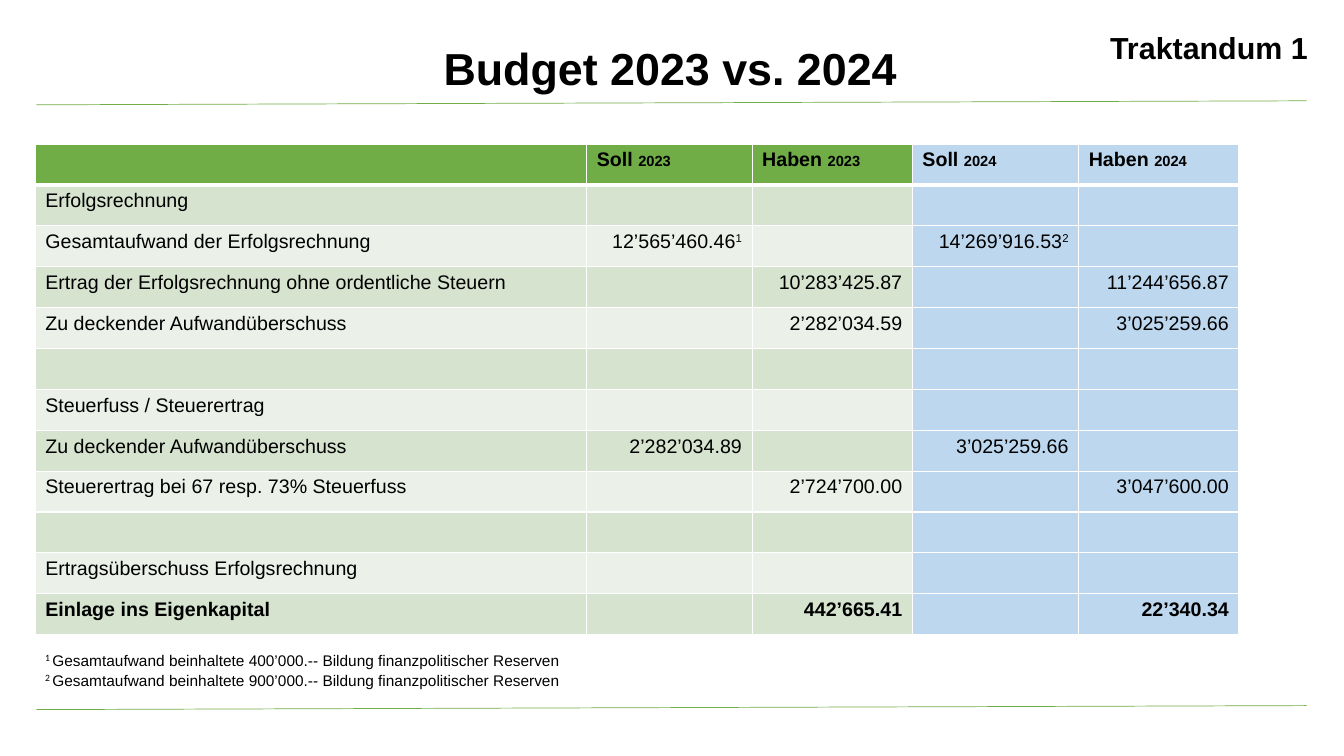
from dataclasses import dataclass
from typing import Any, NamedTuple

from lxml import etree
from pptx import Presentation
from pptx import util as u
from pptx.dml import color
from pptx.enum import shapes, text
from pptx.oxml import ns


@dataclass(frozen=True)
class Theme:
    font: str = "Arial"
    note_mark_font: str = "Calibri"
    ink: str = "000000"
    white: str = "FFFFFF"
    green: str = "70AD47"
    blue: str = "BDD7EE"
    bands: tuple[str, str] = ("D5E3CF", "EBF1E9")
    title: float = 32
    agenda: float = 21.7
    body: float = 14
    year: float = 10.5
    note: float = 11
    note_mark: float = 12


class Span(NamedTuple):
    words: str
    size: float
    bold: bool = False
    raised: bool = False
    font: str = "Arial"


class Frame(NamedTuple):
    left: float
    top: float
    width: float
    height: float


class Label(NamedTuple):
    frame: Frame
    lines: list[list[Span]]
    formats: dict[str, Any]


class Entry(NamedTuple):
    name: str = ""
    debit_2023: str = ""
    credit_2023: str = ""
    debit_2024: str = ""
    credit_2024: str = ""
    bold: bool = False


THEME = Theme()
COLUMN_WIDTHS = (5.47, 1.64, 1.59, 1.65, 1.59)
TABLE_FRAME = Frame(0.35, 1.43, sum(COLUMN_WIDTHS), 4.87)
HEADINGS = (("", ""), ("Soll ", "2023"), ("Haben ", "2023"), ("Soll ", "2024"), ("Haben ", "2024"))
FOOTNOTE_MARKS = {(1, 1): "1", (1, 3): "2"}
RULE_TOPS = (1.0, 7.0)

ENTRIES = (
    Entry("Erfolgsrechnung"),
    Entry("Gesamtaufwand der Erfolgsrechnung", debit_2023="12’565’460.46", debit_2024="14’269’916.53"),
    Entry("Ertrag der Erfolgsrechnung ohne ordentliche Steuern", credit_2023="10’283’425.87", credit_2024="11’244’656.87"),
    Entry("Zu deckender Aufwandüberschuss", credit_2023="2’282’034.59", credit_2024="3’025’259.66"),
    Entry(),
    Entry("Steuerfuss / Steuerertrag"),
    Entry("Zu deckender Aufwandüberschuss", debit_2023="2’282’034.89", debit_2024="3’025’259.66"),
    Entry("Steuerertrag bei 67 resp. 73% Steuerfuss", credit_2023="2’724’700.00", credit_2024="3’047’600.00"),
    Entry(),
    Entry("Ertragsüberschuss Erfolgsrechnung"),
    Entry("Einlage ins Eigenkapital", credit_2023="442’665.41", credit_2024="22’340.34", bold=True),
)


def footnote(mark: str, amount: str) -> list[Span]:
    return [
        Span(f"{mark} ", THEME.note_mark, raised=True, font=THEME.note_mark_font),
        Span(f"Gesamtaufwand beinhaltete {amount}.-- Bildung finanzpolitischer Reserven", THEME.note),
    ]


LABELS = (
    Label(
        Frame(0.35, 0.42, 12.6, 0.8),
        [[Span("Budget 2023 vs. 2024", THEME.title, bold=True)]],
        {"alignment": text.PP_ALIGN.CENTER, "line_spacing": 0.9},
    ),
    Label(
        Frame(10.8, 0.34, 2.27, 0.52),
        [[Span("Traktandum 1", THEME.agenda, bold=True)]],
        {"alignment": text.PP_ALIGN.RIGHT, "line_spacing": 0.7},
    ),
    Label(
        Frame(0.35, 6.4, 9.59, 0.47),
        [footnote("1", "400’000"), footnote("2", "900’000")],
        {"alignment": text.PP_ALIGN.LEFT},
    ),
)


def apply(target: Any, formats: dict[str, Any]) -> None:
    for name, value in formats.items():
        setattr(target, name, value)


def rgb(code: str) -> color.RGBColor:
    return color.RGBColor.from_string(code)


def inches(frame: Frame) -> list[u.Length]:
    return [u.Inches(length) for length in frame]


def write(para: Any, spans: list[Span], formats: dict[str, Any]) -> None:
    apply(para, formats)
    for span in spans:
        run = para.add_run()
        run.text = span.words
        apply(run.font, {"name": span.font, "size": u.Pt(span.size), "bold": span.bold})
        run.font.color.rgb = rgb(THEME.ink)
        if span.raised:
            run._r.get_or_add_rPr().set("baseline", "30000")


def draw_rule(page: Any, top: float) -> None:
    ends = [u.Inches(length) for length in (0.36, top + 0.04, 12.96, top)]
    rule = page.shapes.add_connector(shapes.MSO_CONNECTOR.STRAIGHT, *ends)
    rule.line.color.rgb = rgb(THEME.green)
    rule.line.width = u.Pt(0.5)
    etree.SubElement(rule.element.spPr, ns.qn("a:effectLst"))


def draw_label(page: Any, label: Label) -> None:
    box = page.shapes.add_textbox(*inches(label.frame))
    box.text_frame.word_wrap = True
    for index, spans in enumerate(label.lines):
        para = box.text_frame.add_paragraph() if index else box.text_frame.paragraphs[0]
        write(para, spans, label.formats)


def style_cell(cell: Any, row: int, column: int) -> None:
    widths = {"lnL": 1, "lnR": 1, "lnT": 3 if row == 1 else 1, "lnB": 3 if row == 0 else 1}
    properties = cell._tc.get_or_add_tcPr()
    for side, width in widths.items():
        border = etree.SubElement(properties, ns.qn(f"a:{side}"), w=str(u.Pt(width)))
        fill = etree.SubElement(border, ns.qn("a:solidFill"))
        etree.SubElement(fill, ns.qn("a:srgbClr"), val=THEME.white)
    green = THEME.green if row == 0 else THEME.bands[(row - 1) % 2]
    cell.fill.solid()
    cell.fill.fore_color.rgb = rgb(THEME.blue if column > 2 else green)


def cell_spans(row: int, column: int) -> list[Span]:
    if row == 0:
        heading, year = HEADINGS[column]
        spans = [Span(heading, THEME.body, True), Span(year, THEME.year, True)]
    else:
        entry = ENTRIES[row - 1]
        mark = FOOTNOTE_MARKS.get((row - 1, column), "")
        spans = [Span(entry[column], THEME.body, entry.bold), Span(mark, THEME.body, raised=True)]
    return [span for span in spans if span.words]


def draw_table(page: Any) -> None:
    row_count = len(ENTRIES) + 1
    table = page.shapes.add_table(row_count, len(COLUMN_WIDTHS), *inches(TABLE_FRAME)).table
    apply(table, {"first_row": False, "horz_banding": False})
    for column, width in zip(table.columns, COLUMN_WIDTHS):
        column.width = u.Inches(width)
    for row in range(row_count):
        table.rows[row].height = u.Inches(TABLE_FRAME.height / row_count)
        for column in range(len(COLUMN_WIDTHS)):
            cell = table.cell(row, column)
            style_cell(cell, row, column)
            side = text.PP_ALIGN.RIGHT if row and column else text.PP_ALIGN.LEFT
            write(cell.text_frame.paragraphs[0], cell_spans(row, column), {"alignment": side})


def main() -> None:
    deck = Presentation()
    apply(deck, {"slide_width": u.Inches(13.33), "slide_height": u.Inches(7.5)})
    page = deck.slides.add_slide(deck.slide_layouts[6])
    for top in RULE_TOPS:
        draw_rule(page, top)
    for label in LABELS[:2]:
        draw_label(page, label)
    draw_table(page)
    draw_label(page, LABELS[2])
    deck.save("out.pptx")


if __name__ == "__main__":
    main()
